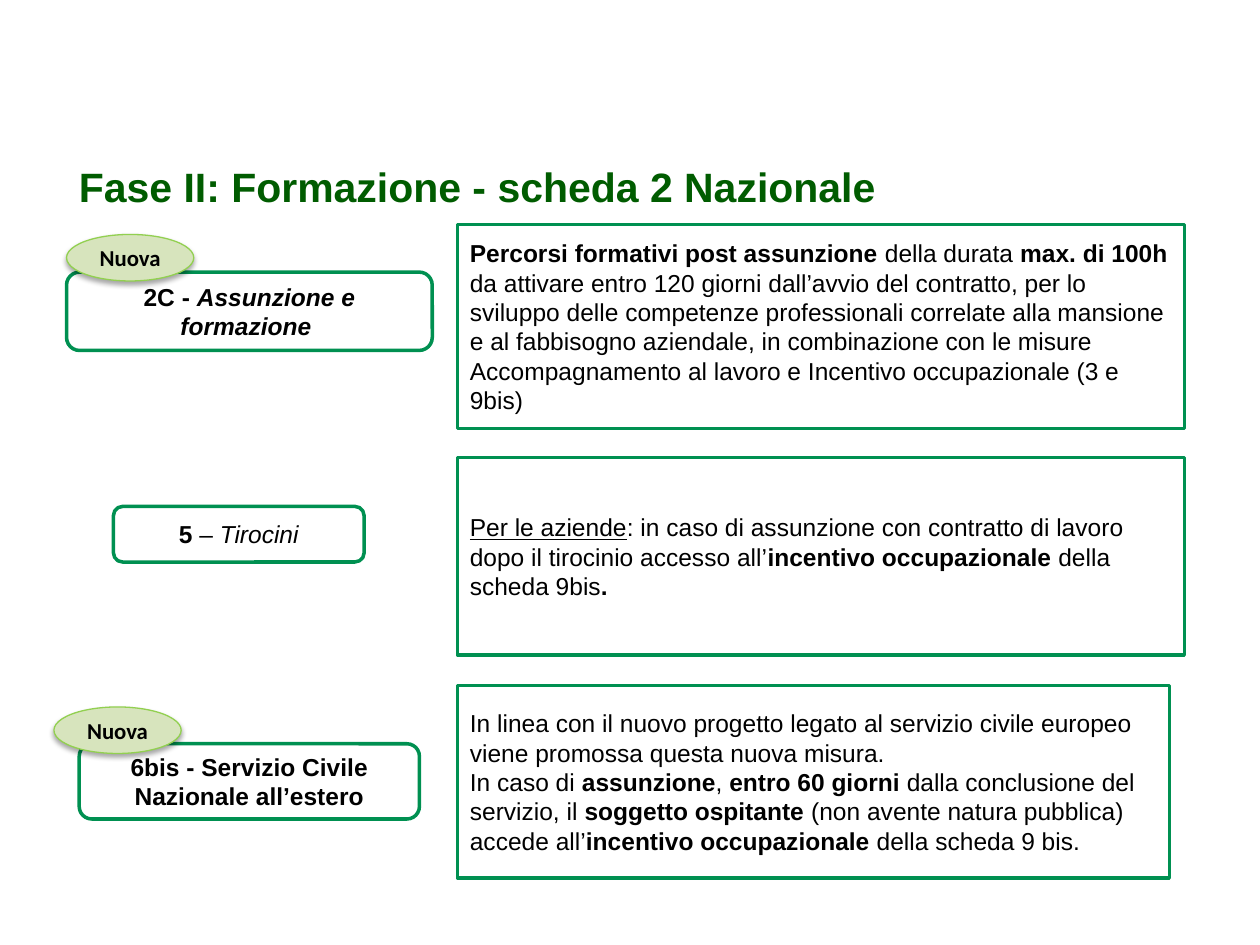
from lxml import etree
from pptx import Presentation
from pptx.dml.color import RGBColor
from pptx.enum.shapes import MSO_SHAPE
from pptx.enum.text import MSO_ANCHOR, PP_ALIGN
from pptx.oxml.ns import qn
from pptx.util import Pt

RECT, ROUNDED, OVAL = MSO_SHAPE.RECTANGLE, MSO_SHAPE.ROUNDED_RECTANGLE, MSO_SHAPE.OVAL
MIDDLE = MSO_ANCHOR.MIDDLE
LEFT, CENTER = PP_ALIGN.LEFT, PP_ALIGN.CENTER

GREEN, TITLE_GREEN, BADGE_FILL, BADGE_LINE = "009051", "005C00", "D7E4BD", "92D050"
BLACK, WHITE = "000000", "FFFFFF"

MEASURES = [
    {
        "box": (38, 128.2, 638.8, 116.6),
        "tag": (0, 27.3, 209, 44.8),
        "badge": (0, 5.8),
        "name": [("2C - ", "b"), ("Assunzione e formazione ", "bi")],
        "details": [[
            ("Percorsi formativi post assunzione ", "b"),
            ("della durata ", ""),
            ("max. di 100h ", "b"),
            ("da attivare entro 120 giorni dall’avvio del contratto, per lo sviluppo "
             "delle competenze professionali correlate alla mansione e al fabbisogno "
             "aziendale, in combinazione con le misure Accompagnamento al lavoro e "
             "Incentivo occupazionale (3 e 9bis)", ""),
        ]],
    },
    {
        "box": (38, 261.4, 638.8, 113),
        "tag": (26.8, 28, 143.3, 31.8),
        "badge": None,
        "name": [("5 ", "b"), ("– ", ""), ("Tirocini", "i")],
        "details": [[
            ("Per le aziende", "u"),
            (": in caso di assunzione con contratto di lavoro dopo il tirocinio "
             "accesso all’", ""),
            ("incentivo occupazionale ", "b"),
            ("della scheda 9bis", ""),
            (".", "b"),
        ]],
    },
    {
        "box": (38, 391.7, 630.2, 110),
        "tag": (7.3, 33.3, 194.4, 43),
        "badge": (-7.2, 12.3),
        "name": [("6bis - Servizio Civile Nazionale all’estero", "b")],
        "details": [
            [("In linea con il nuovo progetto legato al servizio civile europeo viene "
              "promossa questa nuova misura.", "")],
            [
                ("In caso di ", ""),
                ("assunzione", "b"),
                (", ", ""),
                ("entro 60 giorni ", "b"),
                ("dalla conclusione del servizio, il ", ""),
                ("soggetto ospitante ", "b"),
                ("(non avente natura pubblica) accede all’", ""),
                ("incentivo occupazionale ", "b"),
                ("della scheda 9 bis.", ""),
            ],
        ],
    },
]
DETAILS_OFFSET = 223.4


def color(value):
    """Return the colour for a hex string."""
    return RGBColor.from_string(value)


def write(frame, paragraphs, size, font="Arial", ink=BLACK, align=LEFT):
    """Fill a frame with paragraphs of (text, style letters) runs."""
    frame.word_wrap = True
    frame.vertical_anchor = MIDDLE
    for index, runs in enumerate(paragraphs):
        paragraph = frame.add_paragraph() if index else frame.paragraphs[0]
        paragraph.alignment = align
        paragraph.font.size = Pt(size)
        paragraph.font.name = font
        paragraph.font.color.rgb = color(ink)
        for text, style in runs:
            run = paragraph.add_run()
            run.text = text
            run.font.bold = "b" in style
            run.font.italic = "i" in style
            run.font.underline = "u" in style


def add_panel(slide, kind, box, fill=WHITE, line=GREEN, weight=2):
    """Add a filled and outlined shape without shadow."""
    panel = slide.shapes.add_shape(kind, *map(Pt, box))
    panel.shadow.inherit = False
    panel.fill.solid()
    panel.fill.fore_color.rgb = color(fill)
    panel.line.color.rgb = color(line)
    panel.line.width = Pt(weight)
    return panel


def add_soft_shadow(shape):
    """Give a shape a soft shadow that falls straight down."""
    effects = shape._element.spPr.find(qn("a:effectLst"))
    shadow = etree.SubElement(
        effects, qn("a:outerShdw"), blurRad=str(Pt(3.1)), dist=str(Pt(1.8)),
        dir="5400000", rotWithShape="0")
    tint = etree.SubElement(shadow, qn("a:srgbClr"), val=BLACK)
    etree.SubElement(tint, qn("a:alpha"), val="35000")


def add_title(slide, box):
    """Add the slide heading."""
    heading = slide.shapes.add_textbox(*map(Pt, box))
    write(heading.text_frame, [[("Fase II: Formazione - scheda 2 Nazionale", "b")]],
          23.4, ink=TITLE_GREEN)


def add_badge(slide, left, top):
    """Add the oval that marks a new measure."""
    badge = add_panel(slide, OVAL, (left, top, 72.7, 26.6), BADGE_FILL, BADGE_LINE, 0.75)
    add_soft_shadow(badge)
    frame = badge.text_frame
    frame.margin_left = frame.margin_right = 0
    write(frame, [[("Nuova", "b")]], 13, "Calibri", align=CENTER)


def add_measure(slide, box, tag, badge, name, details):
    """Add one row: the measure's tag, its details and an optional badge."""
    left, top, width, height = box
    dx, dy, tag_width, tag_height = tag
    label = add_panel(slide, ROUNDED, (left + dx, top + dy, tag_width, tag_height))
    write(label.text_frame, [name], 14, align=CENTER)
    description = add_panel(
        slide, RECT, (left + DETAILS_OFFSET, top, width - DETAILS_OFFSET, height))
    write(description.text_frame, details, 14)
    if badge:
        add_badge(slide, left + badge[0], top + badge[1])


def main():
    """Build and save the slide."""
    deck = Presentation()
    deck.slide_width, deck.slide_height = Pt(720), Pt(540)
    slide = deck.slides.add_slide(deck.slide_layouts[6])
    add_title(slide, (38, 95, 648, 23))
    for measure in MEASURES:
        add_measure(slide, **measure)
    deck.save("out.pptx")


if __name__ == "__main__":
    main()
